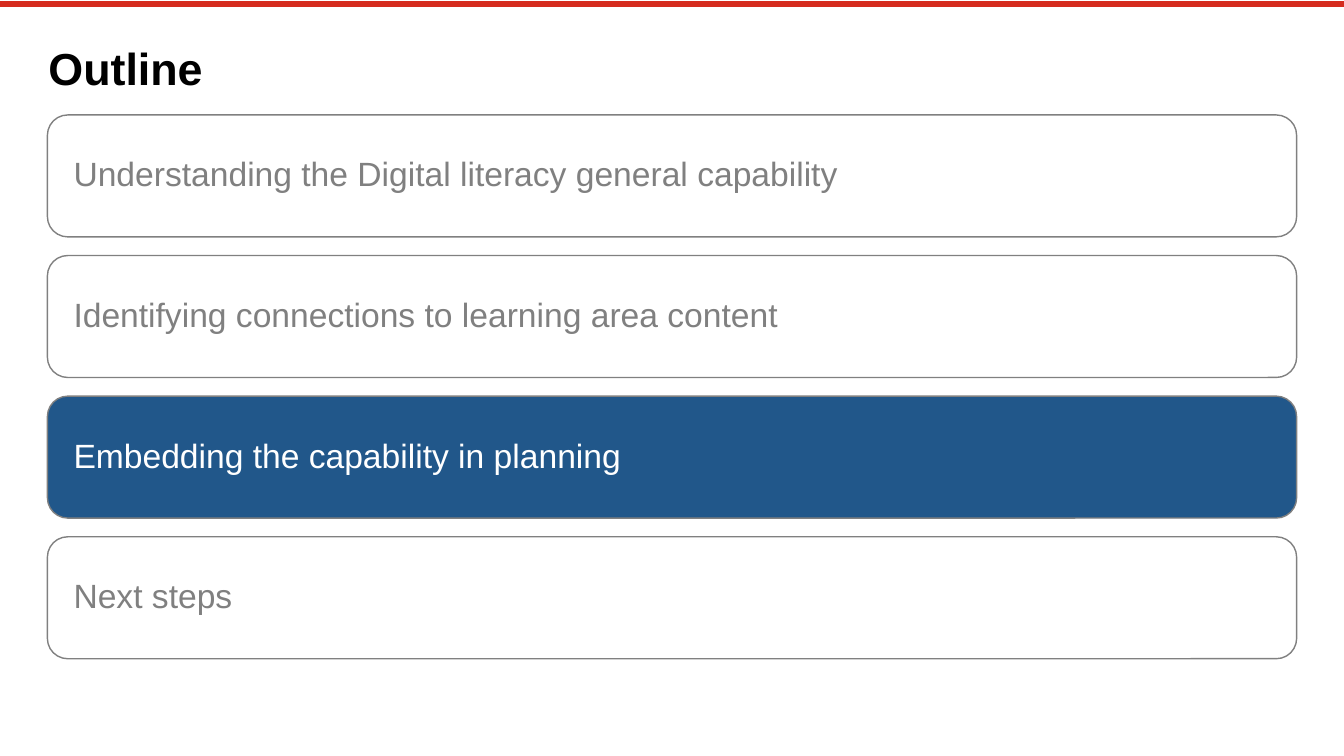
"""Build the outline slide with its third section highlighted."""
from lxml.etree import SubElement
from pptx import Presentation
from pptx.dml.color import RGBColor
from pptx.enum.shapes import MSO_CONNECTOR, MSO_SHAPE
from pptx.enum.text import MSO_ANCHOR, PP_ALIGN
from pptx.oxml.ns import qn
from pptx.util import Inches, Pt

RED = RGBColor(0xD5, 0x2B, 0x1E)
BLUE = RGBColor(0x21, 0x57, 0x8A)
GREY = RGBColor(0x80, 0x80, 0x80)
WHITE = RGBColor(0xFF, 0xFF, 0xFF)
BLACK = RGBColor(0x00, 0x00, 0x00)

SECTIONS = [
    "Understanding the Digital literacy general capability",
    "Identifying connections to learning area content",
    "Embedding the capability in planning",
    "Next steps",
]
CURRENT_SECTION = "Embedding the capability in planning"
FIRST_TOP = 1.14
SECTION_STEP = 1.395


def add_text(paragraph, text, size, color, bold=False):
    span = paragraph.add_run()
    span.text = text
    span.font.name = "Arial"
    span.font.size = Pt(size)
    span.font.bold = bold
    span.font.color.rgb = color


def set_insets(frame, left, others):
    frame.word_wrap = True
    frame.margin_left = Inches(left)
    frame.margin_top = frame.margin_right = frame.margin_bottom = Inches(others)


deck = Presentation()
deck.slide_width = Inches(13.33)
deck.slide_height = Inches(7.5)
page = deck.slides.add_slide(deck.slide_layouts[6])

top_rule = page.shapes.add_connector(
    MSO_CONNECTOR.STRAIGHT, Inches(0), Inches(0.04), Inches(13.33), Inches(0.04)
)
top_rule.line.color.rgb = RED
top_rule.line.width = Pt(4.2)
SubElement(top_rule.element.spPr, qn("a:effectLst"))

title = page.shapes.add_textbox(Inches(0.48), Inches(0.4), Inches(12.39), Inches(0.52))
set_insets(title.text_frame, 0, 0)
add_text(title.text_frame.paragraphs[0], "Outline", 32, BLACK, bold=True)

for index, section in enumerate(SECTIONS):
    is_current = section == CURRENT_SECTION
    box = page.shapes.add_shape(
        MSO_SHAPE.ROUNDED_RECTANGLE,
        Inches(0.47), Inches(FIRST_TOP + index * SECTION_STEP),
        Inches(12.39), Inches(1.21),
    )
    box.shadow.inherit = False
    box.fill.solid()
    box.fill.fore_color.rgb = BLUE if is_current else WHITE
    box.line.color.rgb = GREY
    box.line.width = Pt(1)
    frame = box.text_frame
    set_insets(frame, 0.2, 0.1)
    frame.vertical_anchor = MSO_ANCHOR.MIDDLE
    para = frame.paragraphs[0]
    para.alignment = PP_ALIGN.LEFT
    para.line_spacing = 0.9
    add_text(para, section, 24, WHITE if is_current else GREY)

deck.save("out.pptx")
